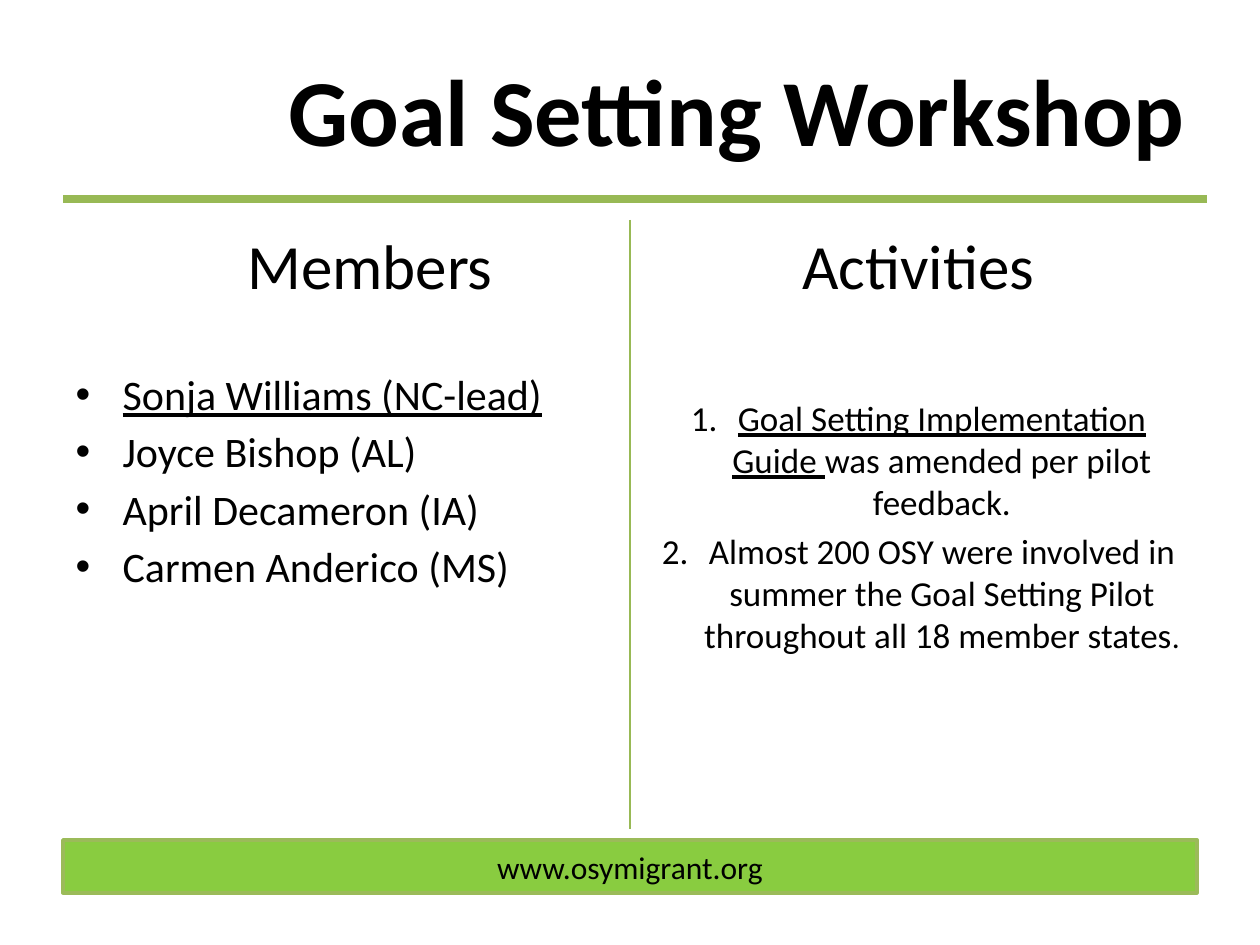
from dataclasses import dataclass

from lxml import etree
from pptx import Presentation
from pptx.dml.color import RGBColor
from pptx.enum.shapes import MSO_CONNECTOR, MSO_SHAPE
from pptx.enum.text import MSO_ANCHOR, MSO_AUTO_SIZE, PP_ALIGN
from pptx.oxml.ns import qn
from pptx.util import Pt

LEFT, CENTER, RIGHT = PP_ALIGN.LEFT, PP_ALIGN.CENTER, PP_ALIGN.RIGHT
MIDDLE, TOP = MSO_ANCHOR.MIDDLE, MSO_ANCHOR.TOP
NO_AUTOFIT = MSO_AUTO_SIZE.NONE
STRAIGHT = MSO_CONNECTOR.STRAIGHT
RECTANGLE = MSO_SHAPE.RECTANGLE
SCALE = 914400 / 126


@dataclass(frozen=True)
class Theme:
    font: str = "Calibri"
    bullet_font: str = "Arial"
    text: RGBColor = RGBColor(0x00, 0x00, 0x00)
    rule: RGBColor = RGBColor(0x98, 0xB9, 0x55)
    banner: RGBColor = RGBColor(0x89, 0xCC, 0x40)
    banner_line: RGBColor = RGBColor(0x9B, 0xBB, 0x59)
    title_size: int = 54
    heading_size: int = 36
    member_size: int = 24
    activity_size: int = 20
    small_size: int = 18


theme = Theme()


def px(*lengths):
    return [round(length * SCALE) for length in lengths]


def write(frame, spans, size, first=False, align=LEFT, bold=False,
          before=0, indent=0, hanging=0, marker=None):
    para = frame.paragraphs[0] if first else frame.add_paragraph()
    properties = para._p.get_or_add_pPr()
    margin, hang = px(indent, -hanging)
    properties.set("marL", str(margin))
    properties.set("indent", str(hang))
    if marker == "bullet":
        etree.SubElement(properties, qn("a:buFont"), typeface=theme.bullet_font)
        etree.SubElement(properties, qn("a:buChar"), char="•")
    elif marker == "number":
        etree.SubElement(properties, qn("a:buFont")).set("typeface", "+mj-lt")
        etree.SubElement(properties, qn("a:buAutoNum"), type="arabicPeriod")
    else:
        etree.SubElement(properties, qn("a:buNone"))
    para.alignment = align
    para.space_before = Pt(before)
    for text, underline, span_size in spans:
        span = para.add_run()
        span.text = text
        span.font.name = theme.font
        span.font.size = Pt(span_size or size)
        span.font.bold = bold
        span.font.underline = underline
        span.font.color.rgb = theme.text


deck = Presentation()
deck.slide_width, deck.slide_height = px(1260, 945)
page = deck.slides.add_slide(deck.slide_layouts[3])
title, members, activities = page.placeholders

for box, bounds, anchor in (
    (title, (63, 38, 1134, 141), MIDDLE),
    (members, (63, 220, 557, 609), TOP),
    (activities, (640, 220, 557, 609), TOP),
):
    box.left, box.top, box.width, box.height = px(*bounds)
    box.text_frame.auto_size = NO_AUTOFIT
    box.text_frame.word_wrap = True
    box.text_frame.vertical_anchor = anchor

write(title.text_frame, [("Goal Setting Workshop", False, None)], theme.title_size,
      first=True, align=RIGHT, bold=True)

member_names = ["Sonja Williams (NC-lead)", "Joyce Bishop (AL)",
                "April Decameron (IA)", "Carmen Anderico (MS)"]
write(members.text_frame, [("Members", False, None)], theme.heading_size,
      first=True, align=CENTER, indent=57)
for index, name in enumerate(member_names):
    write(members.text_frame, [(name, index == 0, None)], theme.member_size,
          before=4 if index else 38, indent=47, hanging=47, marker="bullet")

activity_items = [
    [("Goal Setting Implementation Guide ", True, None),
     ("was amended per pilot feedback.", False, None)],
    [("Almost 200 OSY were involved in summer the Goal Setting Pilot "
      "throughout all 18 member states", False, None),
     (".", False, theme.small_size)],
]
write(activities.text_frame, [("Activities", False, None)], theme.heading_size,
      first=True, align=CENTER)
for index, spans in enumerate(activity_items):
    write(activities.text_frame, spans, theme.activity_size, align=CENTER,
          before=4 if index else 54, indent=47, hanging=47, marker="number")

for ends, width in (((63, 199, 1207, 199), 4.5), ((630, 220, 630, 829), 1.5)):
    rule = page.shapes.add_connector(STRAIGHT, *px(*ends))
    rule.line.color.rgb = theme.rule
    rule.line.width = Pt(width)
    etree.SubElement(rule._element.spPr, qn("a:effectLst"))

banner = page.shapes.add_shape(RECTANGLE, *px(63, 840, 1134, 53))
banner.shadow.inherit = False
banner.fill.solid()
banner.fill.fore_color.rgb = theme.banner
banner.line.color.rgb = theme.banner_line
banner.line.width = Pt(2)
banner.text_frame.word_wrap = True
banner.text_frame.vertical_anchor = MIDDLE
write(banner.text_frame, [("www.osymigrant.org", False, None)], theme.small_size,
      first=True, align=CENTER)

deck.save("out.pptx")
